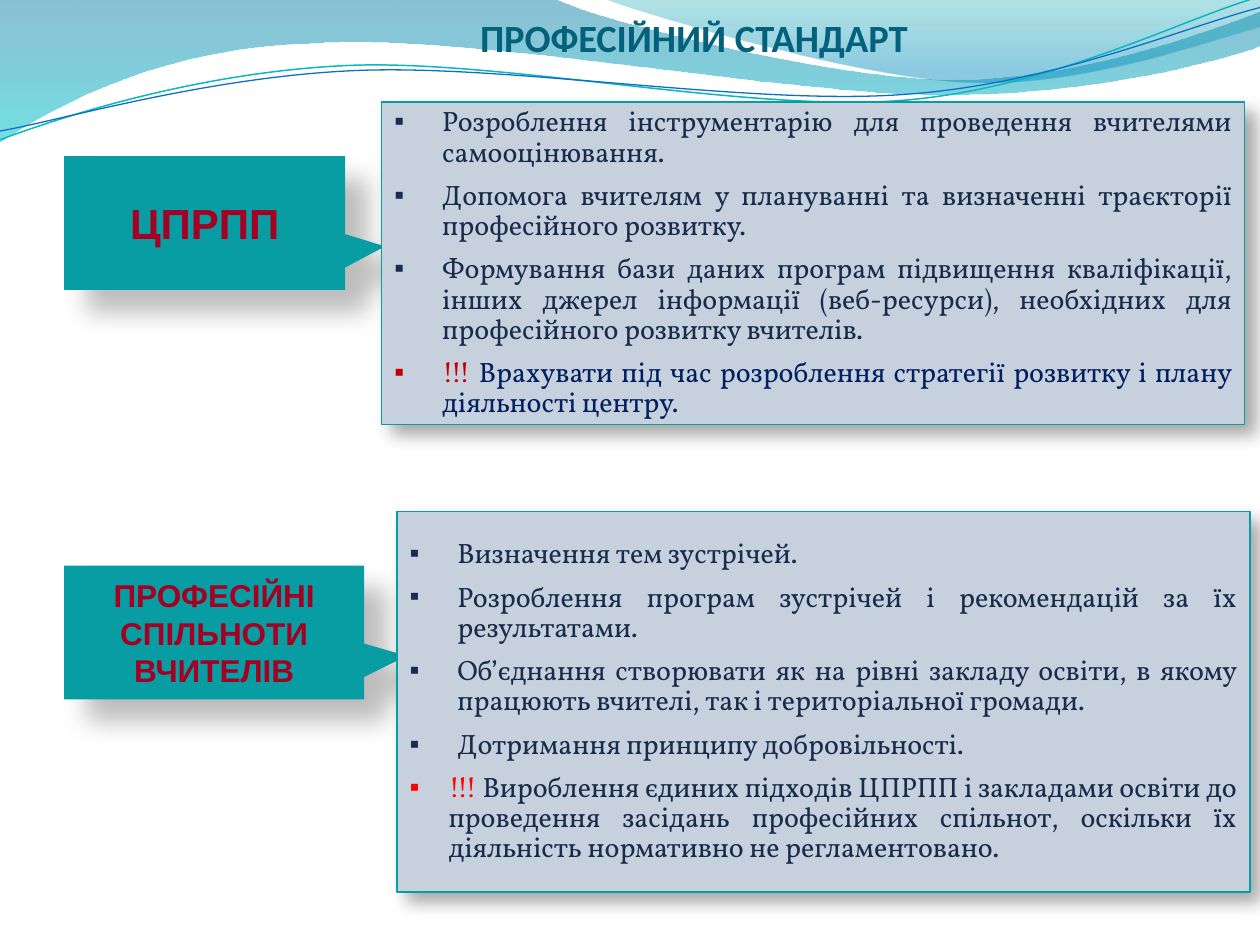
from lxml.etree import SubElement
from pptx import Presentation
from pptx.dml.color import RGBColor
from pptx.enum.shapes import MSO_SHAPE
from pptx.enum.text import MSO_ANCHOR, MSO_AUTO_SIZE, PP_ALIGN
from pptx.oxml.ns import qn
from pptx.util import Inches, Pt


class Theme:
    title = ("Calibri", 22, "04617B", True)
    body = ("Vollkorn", 16, "182C4B", False)
    label, label_size, label_ink = "Arial", (24, 18), "A50021"
    teal, panel = "089CA3", "C7D1DE"
    # alpha %, blur pt, distance pt
    label_shade, panel_shade = (26, 15, 18), (35, 10.2, 8)


TITLE = "ПРОФЕСІЙНИЙ СТАНДАРТ"
MARK = "!!! "
GROUPS = [
    dict(
        label="ЦПРПП", label_box=(0.51, 1.24, 2.23, 1.06),
        box=(3.03, 0.81, 6.85, 2.56),
        items=[
            "Розроблення інструментарію для проведення вчителями самооцінювання.",
            "Допомога вчителям у плануванні та визначенні траєкторії професійного розвитку.",
            "Формування бази даних програм підвищення кваліфікації, інших джерел "
            "інформації (веб-ресурси), необхідних для професійного розвитку вчителів.",
        ],
        note="Врахувати під час розроблення стратегії розвитку і плану діяльності центру.",
        mark_ink="C00000", note_ink="002060", note_indent=0.38,
    ),
    dict(
        label="ПРОФЕСІЙНІ СПІЛЬНОТИ ВЧИТЕЛІВ", label_box=(0.51, 4.49, 2.38, 1.06),
        box=(3.15, 4.06, 6.77, 3.02),
        items=[
            "Визначення тем зустрічей.",
            "Розроблення програм зустрічей і рекомендацій за їх результатами.",
            "Об’єднання створювати як на рівні закладу освіти, в якому працюють "
            "вчителі, так і територіальної громади.",
            "Дотримання принципу добровільності.",
        ],
        note="Вироблення єдиних підходів ЦПРПП і закладами освіти до проведення засідань "
             "професійних спільнот, оскільки їх діяльність нормативно не регламентовано.",
        mark_ink="FF0000", note_ink="182C4B", note_indent=0.31,
    ),
]

# A pair is a straight step; six numbers are two handles and an end point.
# Gradient stops: position, colour, alpha %
WAVES = [
    ([(0, 0), (4.4, -0.01), (4.76, 0.17, 6.64, 0.63, 7.58, 0.63),
      (8.53, 0.63, 9.58, 0.26, 10, 0.09), (10.01, 0.36),
      (9.83, 0.44, 8.7, 0.76, 7.46, 0.75), (6.22, 0.75, 3.82, 0.28, 2.57, 0.34),
      (1.29, 0.36, 0.46, 0.83, -0.01, 1.13)],
     [(0, "0074A1", 45), (1, "00C6CF", 55)]),
    ([(4.79, -0.01), (5.09, 0.11, 6.82, 0.62, 7.69, 0.65),
      (8.56, 0.69, 9.61, 0.32, 10, 0.21), (10, 0)],
     [(0, "00A1A9", 30), (0.8, "008BBF", 45)]),
]
STROKES = [
    ([(0, 1.11), (0.48, 0.93, 1.58, 0.57, 2.77, 0.52),
      (3.95, 0.47, 5.93, 0.89, 7.13, 0.8), (8.33, 0.71, 9.38, 0.15, 9.98, -0.02)],
     "0AB8BF", 0.85),
    ([(0, 1.04), (0.47, 0.96, 1.64, 0.61, 2.83, 0.56),
      (4.03, 0.51, 5.97, 0.84, 7.17, 0.75), (8.36, 0.67, 9.41, 0.21, 10, 0.06)],
     "0F6FC6", 0.75),
]


def add_curve(shapes, steps, close):
    """Draw all points as lines, then join each handle triple into a Bezier."""
    points = [(step[i] * 100, step[i + 1] * 100)
              for step in steps for i in range(0, len(step), 2)]
    pen = shapes.build_freeform(*points[0], scale=Inches(0.01))
    pen.add_line_segments(points[1:], close=close)
    curve = pen.convert_to_shape()
    curve.shadow.inherit = False
    lines = iter(list(curve._element.iter(qn("a:lnTo"))))
    for step in steps[1:]:
        line = next(lines)
        if len(step) == 6:
            bend = SubElement(line.getparent(), qn("a:cubicBezTo"))
            line.addprevious(bend)
            for part in (line, next(lines), next(lines)):
                bend.append(part[0])
                part.getparent().remove(part)
    return curve


def set_alpha(color, share):
    SubElement(color, qn("a:alpha"), val=str(share * 1000))


def cast_shadow(shape, alpha, blur, dist):
    shape.shadow.inherit = False
    effects = shape._element.spPr.find(qn("a:effectLst"))
    outer = SubElement(effects, qn("a:outerShdw"), blurRad=str(Pt(blur)),
                       dist=str(Pt(dist)), dir="2700000", algn="tl", rotWithShape="0")
    set_alpha(SubElement(outer, qn("a:srgbClr"), val="000000"), alpha)


def place(shape, box):
    shape.left, shape.top, shape.width, shape.height = map(Inches, box)


def paint(shape, color):
    shape.fill.solid()
    shape.fill.fore_color.rgb = RGBColor.from_string(color)


def style(run, face, size, color, bold):
    font = run.font
    font.name, font.size, font.bold = face, Pt(size), bold
    font.color.rgb = RGBColor.from_string(color)


def set_bullet(para, indent):
    para.alignment = PP_ALIGN.JUSTIFY
    para.line_spacing, para.space_before = 0.9, Pt(7.5)
    props = para._p.get_or_add_pPr()
    props.set("marL", str(Inches(indent)))
    props.set("indent", str(-Inches(indent)))
    SubElement(props, qn("a:buChar"), char="▪")


def add_label(shapes, group, size):
    label = shapes.add_shape(MSO_SHAPE.RECTANGULAR_CALLOUT,
                             *map(Inches, group["label_box"]))
    label.adjustments[0], label.adjustments[1] = 0.642, 0.175
    paint(label, Theme.teal)
    label.line.fill.background()
    cast_shadow(label, *Theme.label_shade)
    frame = label.text_frame
    frame.text = group["label"]
    frame.word_wrap, frame.vertical_anchor = True, MSO_ANCHOR.MIDDLE
    para = frame.paragraphs[0]
    para.alignment = PP_ALIGN.CENTER
    style(para.runs[0], Theme.label, size, Theme.label_ink, True)


def fill_panel(panel, group):
    place(panel, group["box"])
    paint(panel, Theme.panel)
    panel.line.color.rgb = RGBColor.from_string(Theme.teal)
    panel.line.width = Pt(0.75)
    cast_shadow(panel, *Theme.panel_shade)
    frame = panel.text_frame
    frame.text = "\n".join(group["items"] + [MARK])
    frame.word_wrap, frame.auto_size = True, MSO_AUTO_SIZE.NONE
    frame.vertical_anchor = MSO_ANCHOR.MIDDLE
    *plain, last = frame.paragraphs
    last.add_run().text = group["note"]
    for para in plain:
        set_bullet(para, 0.38)
        style(para.runs[0], *Theme.body)
    set_bullet(last, group["note_indent"])
    for run, ink in zip(last.runs, (group["mark_ink"], group["note_ink"])):
        style(run, *Theme.body)
        run.font.color.rgb = RGBColor.from_string(ink)


def set_title(title):
    place(title, (3.71, 0.06, 3.84, 0.47))
    frame = title.text_frame
    frame.text = TITLE
    frame.word_wrap, frame.auto_size = False, MSO_AUTO_SIZE.NONE
    frame.vertical_anchor = MSO_ANCHOR.TOP
    frame.paragraphs[0].alignment = PP_ALIGN.LEFT
    style(frame.paragraphs[0].runs[0], *Theme.title)


def main():
    deck = Presentation()
    deck.slide_width, deck.slide_height = Inches(10), Inches(7.5)
    slide = deck.slides.add_slide(deck.slide_layouts[3])
    shapes = slide.shapes
    title, *panels = slide.placeholders

    for steps, stops in WAVES:
        wave = add_curve(shapes, steps, True)
        wave.line.fill.background()
        wave.fill.gradient()
        wave.fill.gradient_angle = 270
        for stop, (spot, color, alpha) in zip(wave.fill.gradient_stops, stops):
            stop.position = spot
            stop.color.rgb = RGBColor.from_string(color)
            set_alpha(stop._gs[0], alpha)
    for steps, color, width in STROKES:
        stroke = add_curve(shapes, steps, False)
        stroke.fill.background()
        stroke.line.color.rgb = RGBColor.from_string(color)
        stroke.line.width = Pt(width)

    for group, size in zip(GROUPS, Theme.label_size):
        add_label(shapes, group, size)
    for panel, group in zip(panels, GROUPS):
        fill_panel(panel, group)
    set_title(title)
    for holder in (*panels, title):  # bring the text to the front
        shapes._spTree.append(holder._element)
    deck.save("out.pptx")


if __name__ == "__main__":
    main()
